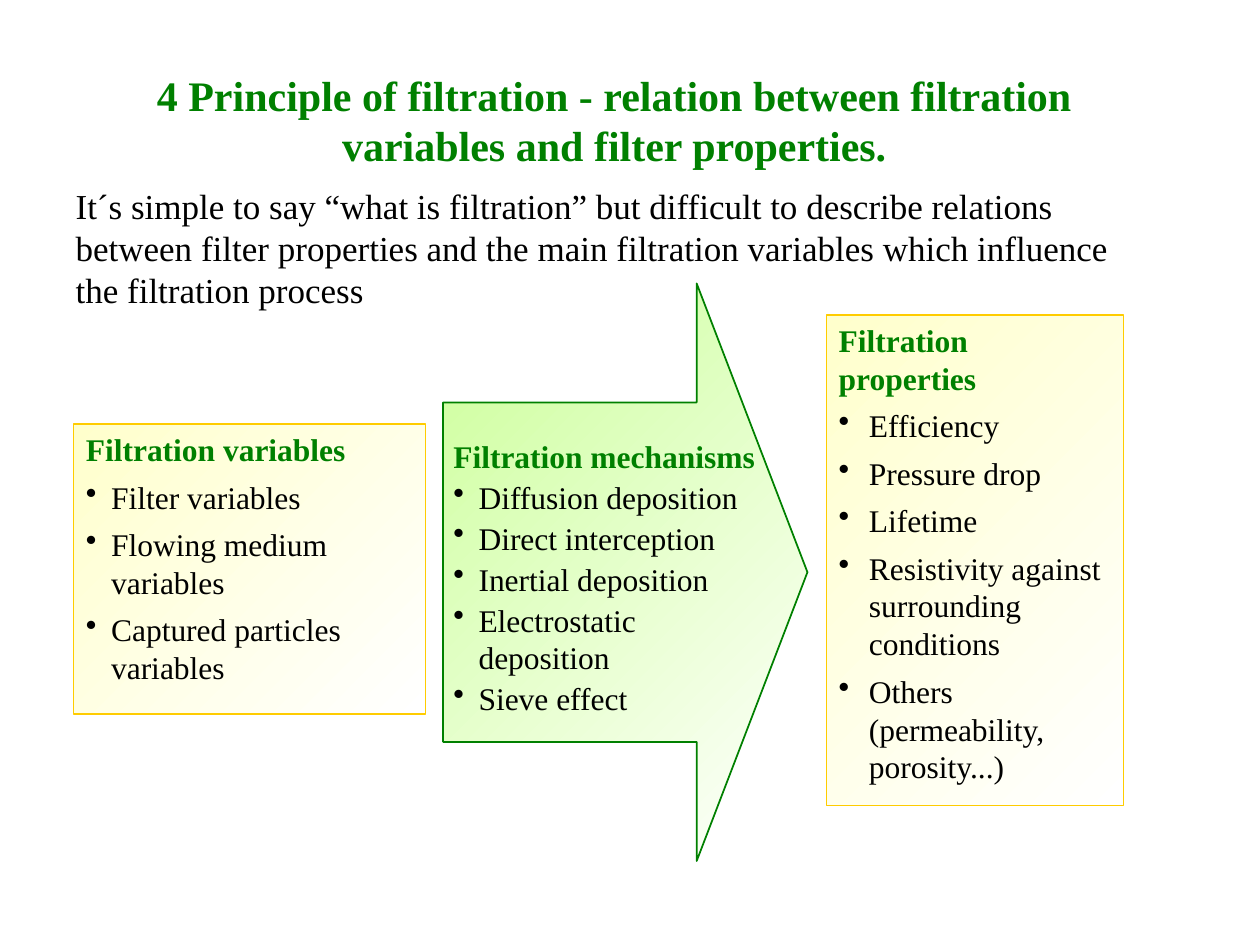
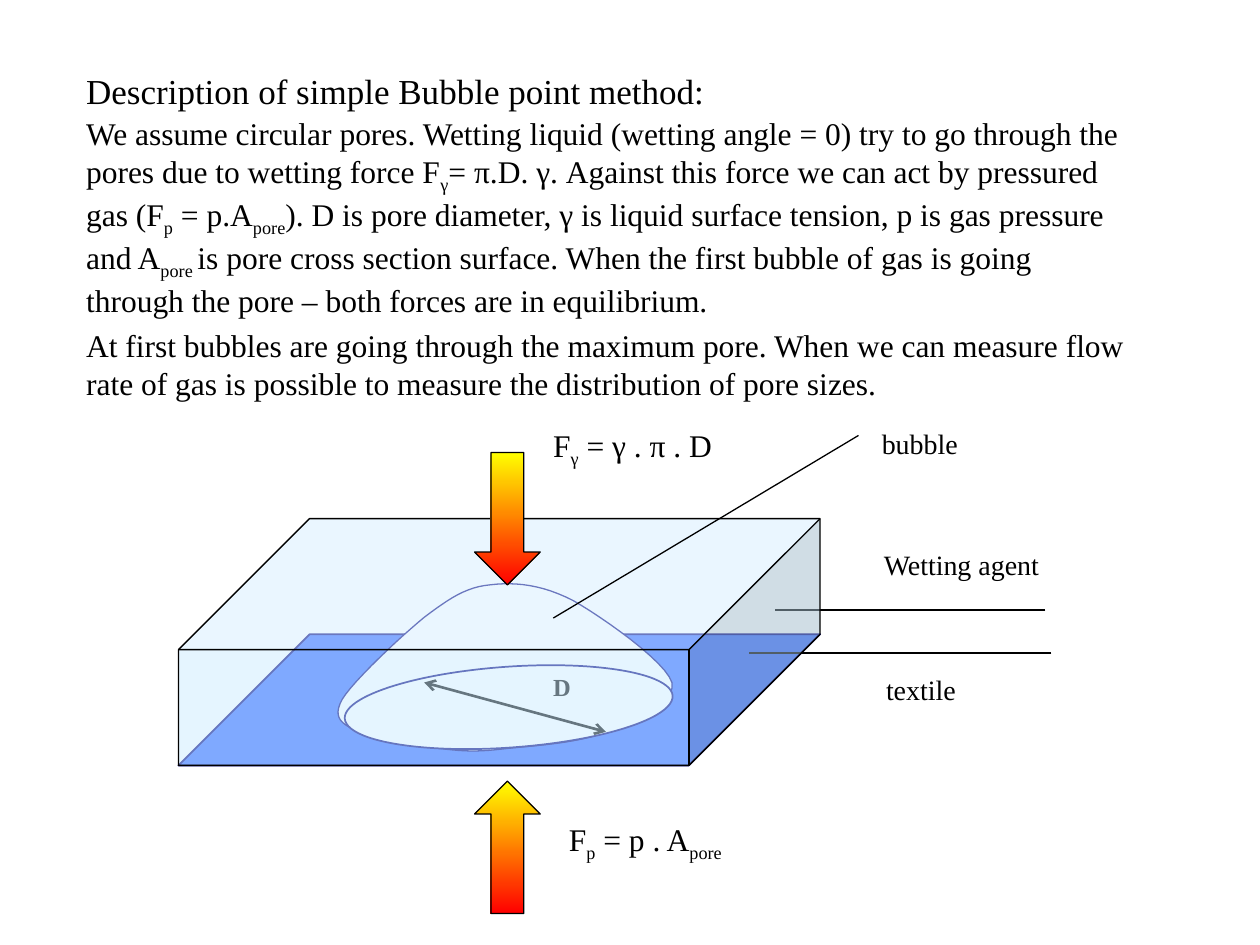
from dataclasses import dataclass
from typing import NamedTuple

from lxml.etree import SubElement
from pptx import Presentation
from pptx.dml.color import RGBColor
from pptx.enum.shapes import MSO_CONNECTOR, MSO_SHAPE as Preset
from pptx.enum.text import MSO_ANCHOR, MSO_AUTO_SIZE, PP_ALIGN
from pptx.oxml.ns import qn
from pptx.util import Inches, Pt

SLIDE_WIDTH, SLIDE_HEIGHT = Inches(10), Inches(7.5)
COLUMN, ROW = SLIDE_WIDTH // 120, SLIDE_HEIGHT // 90
FONT = "Times New Roman"

BLACK = RGBColor(0x00, 0x00, 0x00)
WHITE = RGBColor(0xFF, 0xFF, 0xFF)
GREEN = RGBColor(0x00, 0x80, 0x00)
LIME = RGBColor(0xCC, 0xFF, 0x99)
CREAM = RGBColor(0xFF, 0xFF, 0xCC)
GOLD = RGBColor(0xFF, 0xCC, 0x00)
YELLOW = RGBColor(0xFF, 0xFF, 0x00)
RED = RGBColor(0xFF, 0x00, 0x00)
BLUE = RGBColor(0x33, 0x66, 0xFF)
NAVY = RGBColor(0x00, 0x00, 0x80)
PALE_BLUE = RGBColor(0xCC, 0xEC, 0xFF)

DIAGONAL, DOWNWARD = 315, 270


class Box(NamedTuple):
    """A place on the slide, in columns and rows of the grid."""
    left: float
    top: float
    width: float
    height: float

    def lengths(self) -> tuple[int, ...]:
        units = (COLUMN, ROW, COLUMN, ROW)
        return tuple(round(share * unit) for share, unit in zip(self, units))


class Gradient(NamedTuple):
    start: RGBColor
    end: RGBColor
    angle: float


class TextStyle(NamedTuple):
    size: float
    color: RGBColor = BLACK
    bold: bool = False
    space_before: float = 0
    bullet: str = ""
    hanging: float = 0


@dataclass
class ListCard:
    heading: str
    items: list[str]
    box: Box
    gap: float
    hanging: float
    fill: Gradient | None = None


@dataclass
class Callout:
    text: str
    box: Box
    line_ends: tuple[float, ...]


CREAM_FADE = Gradient(CREAM, WHITE, DIAGONAL)
FORCE_FADE = Gradient(YELLOW, RED, DOWNWARD)

VARIABLES = ListCard(
    "Filtration variables",
    ["Filter variables", "Flowing medium variables", "Captured particles variables"],
    Box(7, 40.4, 33.5, 27.6), 5.5, 0.2, CREAM_FADE)
PROPERTIES = ListCard(
    "Filtration properties",
    ["Efficiency", "Pressure drop", "Lifetime",
     "Resistivity against surrounding conditions",
     "Others (permeability, porosity...)"],
    Box(78.7, 30, 28.3, 46.7), 5.5, 0.24, CREAM_FADE)
MECHANISMS = ListCard(
    "Filtration mechanisms",
    ["Diffusion deposition", "Direct interception", "Inertial deposition",
     "Electrostatic deposition", "Sieve effect"],
    Box(42, 41, 31.5, 23.9), 1.8, 0.2)

TEXTILE = Callout("textile", Box(83.2, 63.5, 18.8, 4.7), (-0.28, 0.9, -0.28, -0.63))
WETTING_AGENT = Callout("Wetting agent", Box(83, 51.6, 18, 5.5), (1.18, 0.92, 1.18, -0.51))
BUBBLE = Callout("bubble", Box(82.8, 40, 17.3, 4.9), (0.3, -0.06, 3.85, -1.74))

# Start point, then two control points and an end point for each curve.
BUBBLE_START = (32.6, 66.6)
BUBBLE_CURVES = [
    ((33.7, 64.8), (38.2, 60.6), (40.4, 58.8)),
    ((42.8, 57), (44.4, 55.9), (46.7, 55.7)),
    ((49.1, 55.4), (51.7, 55.7), (54.6, 57.2)),
    ((57.4, 58.8), (63.4, 63), (64, 65)),
    ((64.4, 67.2), (60.2, 68.8), (57.7, 69.7)),
    ((55.1, 70.8), (50.9, 71), (48.2, 71.3)),
    ((45.7, 71.6), (44.4, 71.6), (42, 71.3)),
    ((39.7, 71), (35.8, 70.6), (34.2, 69.7)),
    ((32.6, 69), (31.6, 68.4), BUBBLE_START),
]


def write_paragraph(paragraph, text: str, style: TextStyle, align=PP_ALIGN.LEFT) -> None:
    """Write text whose [bracketed] parts are subscripts."""
    for index, piece in enumerate(text.replace("]", "[").split("[")):
        if piece:
            run = paragraph.add_run()
            run.text = piece
            if index % 2:
                run._r.get_or_add_rPr().set("baseline", "-25000")
    properties = paragraph._p.get_or_add_pPr()
    properties.set("marL", str(Inches(style.hanging)))
    properties.set("indent", str(-Inches(style.hanging)))
    if style.bullet:
        SubElement(properties, qn("a:buChar")).set("char", style.bullet)
    else:
        SubElement(properties, qn("a:buNone"))
    paragraph.alignment = align
    paragraph.space_before = Pt(style.space_before)
    font = paragraph.font
    font.name, font.size, font.bold = FONT, Pt(style.size), style.bold
    font.color.rgb = style.color


def write_text(shape, lines: list[tuple[str, TextStyle]], align=PP_ALIGN.LEFT) -> None:
    frame = shape.text_frame
    frame.word_wrap = True
    frame.auto_size = MSO_AUTO_SIZE.NONE
    frame.vertical_anchor = MSO_ANCHOR.TOP
    for index, (text, style) in enumerate(lines):
        paragraph = frame.add_paragraph() if index else frame.paragraphs[0]
        write_paragraph(paragraph, text, style, align)


def place(shape, box: Box) -> None:
    shape.left, shape.top, shape.width, shape.height = box.lengths()


def paint(shape, fill: RGBColor | Gradient, line: RGBColor, width: float) -> None:
    shape.shadow.inherit = False
    if isinstance(fill, Gradient):
        shape.fill.gradient()
        shape.fill.gradient_angle = fill.angle
        for stop, color in zip(shape.fill.gradient_stops, (fill.start, fill.end)):
            stop.color.rgb = color
    else:
        shape.fill.solid()
        shape.fill.fore_color.rgb = fill
    shape.line.color.rgb = line
    shape.line.width = Pt(width)


def add_preset(slide, preset: Preset, box: Box, fill: RGBColor | Gradient,
               line: RGBColor = BLACK, width: float = 0.75,
               adjustments: tuple[float, ...] = ()):
    shape = slide.shapes.add_shape(preset, *box.lengths())
    paint(shape, fill, line, width)
    for index, value in enumerate(adjustments):
        shape.adjustments[index] = value
    return shape


def add_label(slide, text: str, box: Box, style: TextStyle) -> None:
    write_text(slide.shapes.add_textbox(*box.lengths()), [(text, style)])


def add_list_card(slide, card: ListCard) -> None:
    if card.fill:
        shape = add_preset(slide, Preset.RECTANGLE, card.box, card.fill, GOLD)
    else:
        shape = slide.shapes.add_textbox(*card.box.lengths())
    item_style = TextStyle(18, space_before=card.gap, bullet="•", hanging=card.hanging)
    write_text(shape, [(card.heading, TextStyle(18, GREEN, True)),
                       *((item, item_style) for item in card.items)])


def add_callout(slide, callout: Callout) -> None:
    shape = add_preset(slide, Preset.LINE_CALLOUT_1_NO_BORDER, callout.box, WHITE,
                       adjustments=callout.line_ends)
    write_text(shape, [(callout.text, TextStyle(16))])


def add_bubble_dome(slide, steps: int = 12) -> None:
    """Draw the bubble as a closed outline of sampled cubic curves."""
    points, start = [], BUBBLE_START
    for curve in BUBBLE_CURVES:
        corners = (start, *curve)
        for step in range(1, steps + 1):
            t = step / steps
            weights = ((1 - t) ** 3, 3 * t * (1 - t) ** 2, 3 * t * t * (1 - t), t ** 3)
            x, y = (sum(weight * corner[axis] for weight, corner in zip(weights, corners))
                    for axis in (0, 1))
            points.append((x * COLUMN, y * ROW))
        start = curve[-1]
    builder = slide.shapes.build_freeform(*points[-1])
    builder.add_line_segments(points[:-1], close=True)
    paint(builder.convert_to_shape(), WHITE, NAVY, 0.75)


def add_diameter_arrow(slide) -> None:
    start_x, start_y, end_x, end_y = Box(40.4, 65, 57.7, 69.7).lengths()
    connector = slide.shapes.add_connector(
        MSO_CONNECTOR.STRAIGHT, start_x, start_y, end_x, end_y)
    connector.line.color.rgb = BLACK
    connector.line.width = Pt(1.5)
    for end in ("a:headEnd", "a:tailEnd"):
        SubElement(connector.line._get_or_add_ln(), qn(end)).set("type", "arrow")
    SubElement(connector._element.spPr, qn("a:effectLst"))


def add_text_slide(presentation):
    """Add a slide and return it with its title and body placeholders."""
    slide = presentation.slides.add_slide(presentation.slide_layouts[1])
    return slide, slide.shapes.title, slide.placeholders[1]


def build_principle_slide(presentation) -> None:
    slide, title, body = add_text_slide(presentation)
    place(title, Box(7, 6, 103, 11))
    write_text(title, [("4 Principle of filtration - relation between filtration "
                        "variables and filter properties.", TextStyle(24, GREEN, True))],
               PP_ALIGN.CENTER)
    place(body, Box(6, 17, 101, 13.2))
    write_text(body, [("It´s simple to say “what is filtration” but difficult to describe "
                       "relations between filter properties and the main filtration "
                       "variables which influence the filtration process", TextStyle(20))])
    add_list_card(slide, VARIABLES)
    add_list_card(slide, PROPERTIES)
    add_preset(slide, Preset.RIGHT_ARROW, Box(42.2, 27, 34.7, 55),
               Gradient(LIME, WHITE, DIAGONAL), GREEN, 1, (0.588, 0.304))
    add_list_card(slide, MECHANISMS)


def build_bubble_point_slide(presentation) -> None:
    slide, title, body = add_text_slide(presentation)
    place(title, Box(7, 6, 102, 5))
    write_text(title, [("Description of simple Bubble point method:", TextStyle(20))])
    place(body, Box(7, 10.3, 102, 27.2))
    write_text(body, [
        ("We assume circular pores. Wetting liquid (wetting angle = 0) try to go through "
         "the pores due to wetting force F[γ]= π.D. γ. Against this force we can act by "
         "pressured gas (F[p] = p.A[pore]). D is pore diameter, γ is liquid surface "
         "tension, p is gas pressure and A[pore ]is pore cross section surface. When the "
         "first bubble of gas is going through the pore – both forces are in equilibrium.",
         TextStyle(18)),
        ("At first bubbles are going through the maximum pore. When we can measure flow "
         "rate of gas is possible to measure the distribution of pore sizes.",
         TextStyle(18, space_before=4))])

    add_preset(slide, Preset.PARALLELOGRAM, Box(17, 60.4, 61.1, 12.5), BLUE, NAVY, 1, (1,))
    add_bubble_dome(slide)
    pore = add_preset(slide, Preset.OVAL, Box(32.8, 63.5, 31.3, 7.7), WHITE, NAVY, 1)
    pore.rotation = 356
    add_preset(slide, Preset.UP_ARROW, Box(45.2, 74.4, 6.25, 12.6), FORCE_FADE)
    add_diameter_arrow(slide)
    add_label(slide, "D", Box(51.5, 63.4, 6.25, 4.7), TextStyle(14, bold=True))
    add_label(slide, "F[γ] = γ . π . D", Box(51.5, 40, 18.8, 6.2), TextStyle(18))
    add_label(slide, "F[p] = p . A[pore]", Box(53, 77.5, 18.8, 6.2), TextStyle(18))
    add_callout(slide, TEXTILE)
    add_callout(slide, WETTING_AGENT)

    liquid = add_preset(slide, Preset.CUBE, Box(17, 49.4, 61.1, 23.5), PALE_BLUE,
                        adjustments=(0.531,))
    liquid_color = liquid._element.spPr.find(qn("a:solidFill"))[0]
    SubElement(liquid_color, qn("a:alpha")).set("val", "50000")
    add_preset(slide, Preset.DOWN_ARROW, Box(45.2, 43.1, 6.25, 12.6), FORCE_FADE)
    add_callout(slide, BUBBLE)


def main() -> None:
    presentation = Presentation()
    presentation.slide_width, presentation.slide_height = SLIDE_WIDTH, SLIDE_HEIGHT
    build_principle_slide(presentation)
    build_bubble_point_slide(presentation)
    presentation.save("out.pptx")


if __name__ == "__main__":
    main()
